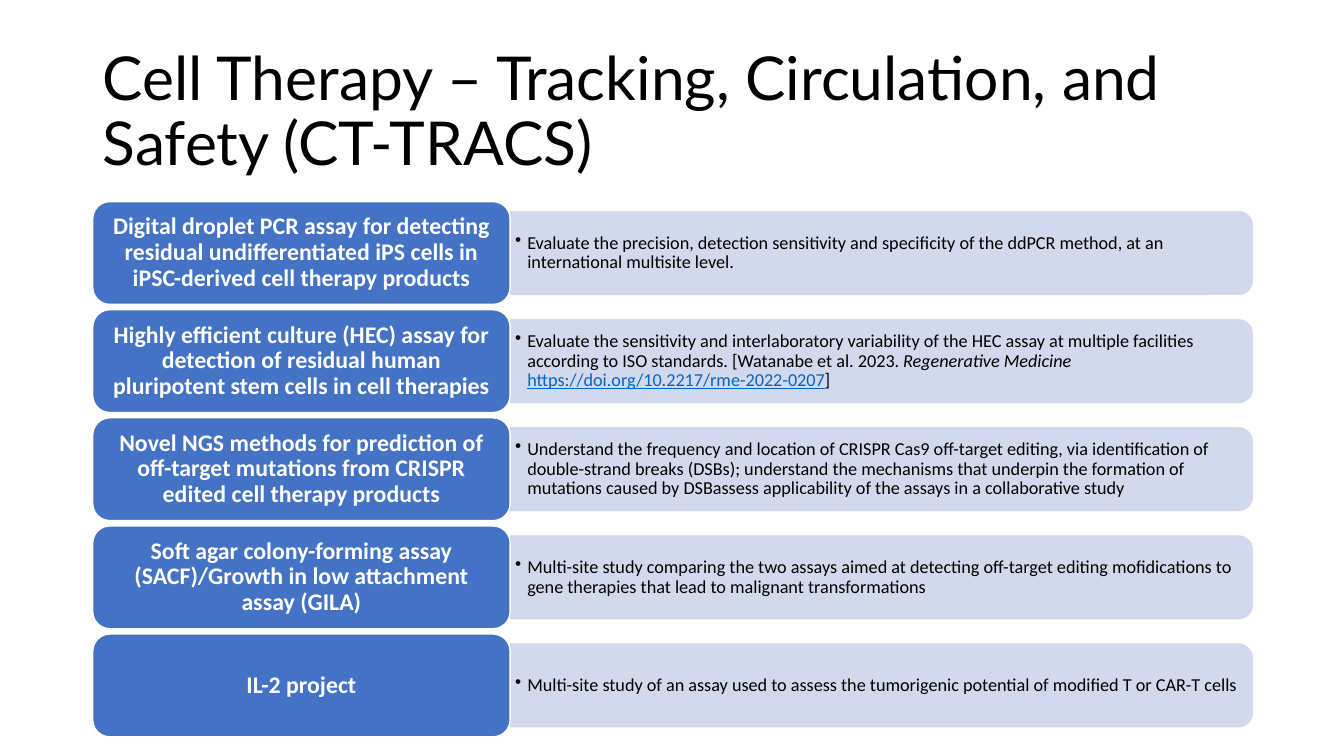
from pptx import Presentation
from pptx.dml.color import RGBColor
from pptx.enum.shapes import MSO_SHAPE
from pptx.enum.text import MSO_ANCHOR, MSO_AUTO_SIZE, PP_ALIGN
from pptx.oxml.ns import qn
from pptx.util import Inches, Pt
from lxml import etree

ROUND, TAB = MSO_SHAPE.ROUNDED_RECTANGLE, MSO_SHAPE.ROUND_2_SAME_RECTANGLE
MIDDLE, FIXED = MSO_ANCHOR.MIDDLE, MSO_AUTO_SIZE.NONE
LEFT, CENTER = PP_ALIGN.LEFT, PP_ALIGN.CENTER

BLACK = RGBColor(0x00, 0x00, 0x00)
WHITE = RGBColor(0xFF, 0xFF, 0xFF)
BLUE = RGBColor(0x44, 0x72, 0xC4)
PALE = RGBColor(0xCF, 0xD5, 0xEA)
LINK = RGBColor(0x05, 0x63, 0xC1)

# Grid: a label column and a detail column, five equal rows
EDGE, SPLIT = 0.92, 5.06
LABEL_W, PANEL_W, TEXT_W = SPLIT - EDGE, 7.36, 7.32
TOP, LAST = 2, 6.29
LABEL_H, PANEL_H, TEXT_H = 1.02, 0.82, 0.74

HEAD = {"name": "Lato", "size": Pt(43.2), "color": BLACK}
LABEL = {"name": "Calibri", "size": Pt(17), "bold": True, "color": WHITE}
BODY = {"name": "Calibri", "size": Pt(13), "color": BLACK}
ITALIC = {**BODY, "italic": True}
URL = {**BODY, "underline": True, "color": LINK}

ROWS = [
    ("Digital droplet PCR assay for detecting residual undifferentiated iPS "
     "cells in iPSC-derived cell therapy products",
     [("Evaluate the precision, detection sensitivity and specificity of the "
       "ddPCR method, at an international multisite level.", BODY)]),
    ("Highly efficient culture (HEC) assay for detection of residual human "
     "pluripotent stem cells in cell therapies",
     [("Evaluate the sensitivity and interlaboratory variability of the HEC "
       "assay at multiple facilities according to ISO standards. "
       "[Watanabe et al. 2023. ", BODY),
      ("Regenerative Medicine ", ITALIC),
      ("https://doi.org/10.2217/rme-2022-0207", URL),
      ("]", BODY)]),
    ("Novel NGS methods for prediction of off-target mutations from CRISPR "
     "edited cell therapy products",
     [("Understand the frequency and location of CRISPR Cas9 off-target "
       "editing, via identification of double-strand breaks (DSBs); "
       "understand the mechanisms that underpin the formation of mutations "
       "caused by DSBassess applicability of the assays in a collaborative "
       "study", BODY)]),
    ("Soft agar colony-forming assay (SACF)/Growth in low attachment assay "
     "(GILA)",
     [("Multi-site study comparing the two assays aimed at detecting "
       "off-target editing mofidications to gene therapies that lead to "
       "malignant transformations", BODY)]),
    ("IL-2 project",
     [("Multi-site study of an assay used to assess the tumorigenic "
       "potential of modified T or CAR-T cells", BODY)]),
]


def box(x, mid, w, h):
    """Left, top, width and height around a row's middle."""
    return [Inches(v) for v in (x, mid - h / 2, w, h)]


def write(shape, runs, align, pad):
    """Fill a shape's frame with one paragraph of formatted runs."""
    frame = shape.text_frame
    across, down = (Inches(v) for v in pad)
    form = {"word_wrap": True, "auto_size": FIXED, "vertical_anchor": MIDDLE,
            "margin_left": across, "margin_right": across,
            "margin_top": down, "margin_bottom": down}
    for key, value in form.items():
        setattr(frame, key, value)
    para = frame.paragraphs[0]
    para.alignment, para.line_spacing = align, 0.9
    for words, style in runs:
        run = para.add_run()
        run.text = words
        for key, value in style.items():
            if key == "color":
                run.font.color.rgb = value
            else:
                setattr(run.font, key, value)
    return para


def paint(shape, fill, line):
    shape.shadow.inherit = False
    shape.fill.solid()
    shape.fill.fore_color.rgb = fill
    shape.line.color.rgb = line
    shape.line.width = Pt(1)


def add_panel(slide, mid):
    """Pale bar, turned so that its rounded end faces right."""
    x = SPLIT + (PANEL_W - PANEL_H) / 2
    panel = slide.shapes.add_shape(TAB, *box(x, mid, PANEL_H, PANEL_W))
    panel.rotation = 90
    paint(panel, PALE, PALE)
    for color in panel._element.spPr.iter(qn("a:srgbClr")):
        etree.SubElement(color, qn("a:alpha"), val="90000")


def add_detail(slide, mid, runs):
    """Bulleted text over the bar."""
    text = slide.shapes.add_textbox(*box(SPLIT, mid, TEXT_W, TEXT_H))
    para = write(text, runs, LEFT, (0.05, 0.03))
    para.level = 1
    props = para._p.get_or_add_pPr()
    hang = Inches(0.12)
    props.set("marL", str(hang))
    props.set("indent", str(-hang))
    etree.SubElement(props, qn("a:buChar"), char="•")


def add_label(slide, mid, words):
    """Blue rounded box with the project's name."""
    label = slide.shapes.add_shape(ROUND, *box(EDGE, mid, LABEL_W, LABEL_H))
    paint(label, BLUE, WHITE)
    write(label, [(words, LABEL)], CENTER, (0.12, 0.09))


def add_title(slide, words):
    title = slide.shapes.title
    spot = {"left": EDGE, "top": 0.4, "width": 11.5, "height": 1.45}
    for key, value in spot.items():
        setattr(title, key, Inches(value))
    write(title, [(words, HEAD)], LEFT, (0.1, 0.05))


def main():
    deck = Presentation()
    deck.slide_width, deck.slide_height = Inches(13.33), Inches(7.5)
    slide = deck.slides.add_slide(deck.slide_layouts[5])
    add_title(slide, "Cell Therapy – Tracking, Circulation, and Safety (CT-TRACS)")

    # One row for each project
    step = (LAST - TOP) / (len(ROWS) - 1)
    for i, (name, runs) in enumerate(ROWS):
        mid = TOP + i * step + LABEL_H / 2
        add_panel(slide, mid)
        add_detail(slide, mid, runs)
        add_label(slide, mid, name)
    deck.save("out.pptx")


if __name__ == "__main__":
    main()
